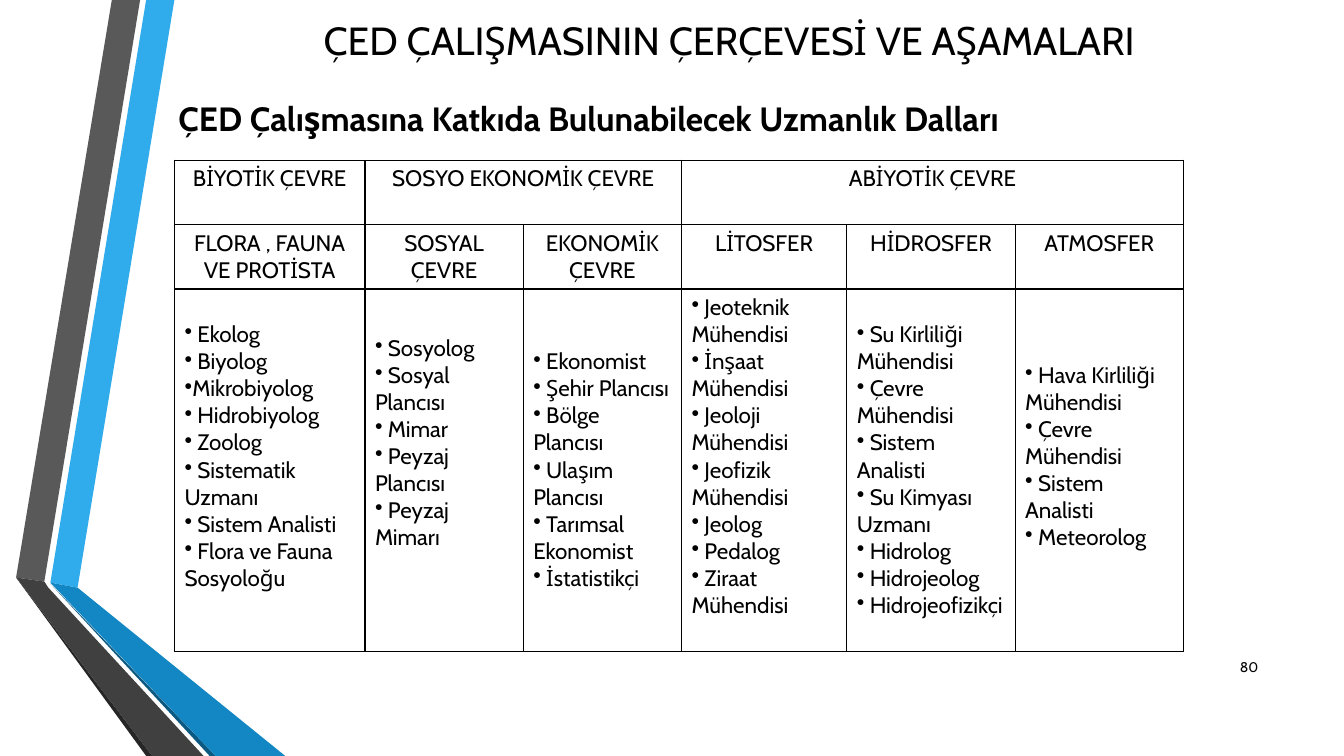
"""Build the slide on the fields of expertise that contribute to an EIA study."""
from lxml.etree import SubElement
from pptx import Presentation
from pptx.dml.color import RGBColor
from pptx.enum.text import MSO_ANCHOR, MSO_AUTO_SIZE, PP_ALIGN
from pptx.oxml.ns import qn
from pptx.util import Inches, Pt


def color(value):
    return RGBColor.from_string(value)


def format_text(frame, size, align, bold=False):
    for para in frame.paragraphs:
        para.alignment = align
        for span in para.runs:
            span.font.name = "Cabin"
            span.font.size = Pt(size)
            span.font.bold = bold
            span.font.color.rgb = color("000000")


deck = Presentation()
deck.slide_width = Inches(13.33)
deck.slide_height = Inches(7.5)
page = deck.slides.add_slide(deck.slide_layouts[1])

ribbons = [
    ("30ACEC", [(0.5, 5.78), (0.77, 5.83), (1.73, 0), (1.45, 0)]),
    ("595959", [(1.39, 0), (1.11, 0), (0.16, 5.73), (0.44, 5.77)]),
    ("262626", [(0.16, 5.73), (1.45, 7.5), (1.51, 7.5)]),
    ("0C5A82", [(0.5, 5.79), (2.08, 7.5), (2.14, 7.5)]),
    ("1287C3", [(0.5, 5.78), (2.14, 7.5), (2.83, 7.5), (0.77, 5.83)]),
    ("404040", [(2.02, 7.5), (0.48, 5.83), (0.44, 5.77), (0.16, 5.73), (1.51, 7.5)]),
]
for fill, points in ribbons:
    corners = [(Inches(x), Inches(y)) for x, y in points]
    builder = page.shapes.build_freeform(*corners[0])
    builder.add_line_segments(corners[1:], close=True)
    ribbon = builder.convert_to_shape()
    ribbon.shadow.inherit = False
    ribbon.fill.solid()
    ribbon.fill.fore_color.rgb = color(fill)
    ribbon.line.fill.background()

title = page.shapes.title
subtitle = page.placeholders[1]
number = page.shapes.add_textbox(0, 0, 0, 0)
texts = [
    (title, (1.75, 0.14, 10.96, 0.51), "ÇED ÇALIŞMASININ ÇERÇEVESİ VE AŞAMALARI",
     28, PP_ALIGN.CENTER, False),
    (subtitle, (1.67, 0.9, 10.96, 0.55),
     "ÇED Çalışmasına Katkıda Bulunabilecek Uzmanlık Dalları",
     24, PP_ALIGN.LEFT, True),
    (number, (11.98, 6.42, 0.6, 0.4), "80", 10, PP_ALIGN.RIGHT, False),
]
for box, place, text, size, align, bold in texts:
    box.left, box.top, box.width, box.height = map(Inches, place)
    frame = box.text_frame
    frame.text = text
    frame.word_wrap = True
    frame.auto_size = MSO_AUTO_SIZE.NONE
    frame.vertical_anchor = MSO_ANCHOR.MIDDLE
    format_text(frame, size, align, bold)

subtitle_para = subtitle.text_frame.paragraphs[0]
subtitle_para.space_before = Pt(0)
subtitle_format = subtitle_para._p.get_or_add_pPr()
subtitle_format.set("marL", "0")
subtitle_format.set("indent", "0")
SubElement(subtitle_format, qn("a:buNone"))

environments = [(0, 0, "BİYOTİK ÇEVRE"), (1, 2, "SOSYO EKONOMİK ÇEVRE"), (3, 5, "ABİYOTİK ÇEVRE")]
fields = [
    ("FLORA , FAUNA VE PROTİSTA", 1.89, 1,
     [" Ekolog", " Biyolog", "Mikrobiyolog", " Hidrobiyolog", " Zoolog",
      " Sistematik Uzmanı", " Sistem Analisti", " Flora ve Fauna Sosyoloğu"]),
    ("SOSYAL ÇEVRE", 1.57, 2,
     [" Sosyolog", " Sosyal Plancısı", " Mimar", " Peyzaj Plancısı", " Peyzaj Mimarı"]),
    ("EKONOMİK ÇEVRE", 1.57, 0,
     [" Ekonomist", " Şehir Plancısı", " Bölge Plancısı", " Ulaşım Plancısı",
      " Tarımsal Ekonomist", " İstatistikçi"]),
    ("LİTOSFER", 1.64, 1,
     [" Jeoteknik Mühendisi", " İnşaat Mühendisi", " Jeoloji Mühendisi",
      " Jeofizik Mühendisi", " Jeolog", " Pedalog", " Ziraat Mühendisi"]),
    ("HİDROSFER", 1.67, 0,
     [" Su Kirliliği Mühendisi", " Çevre Mühendisi", " Sistem Analisti",
      " Su Kimyası Uzmanı", " Hidrolog", " Hidrojeolog", " Hidrojeofizikçi"]),
    ("ATMOSFER", 1.67, 1,
     [" Hava Kirliliği Mühendisi", " Çevre Mühendisi", " Sistem Analisti", " Meteorolog"]),
]
row_heights = [0.64, 0.63, 3.59]
line_height = 0.27

table = page.shapes.add_table(
    len(row_heights), len(fields), Inches(1.73), Inches(1.59),
    Inches(10.01), Inches(sum(row_heights))).table
table.first_row = False
table.horz_banding = False
for row, height in zip(table.rows, row_heights):
    row.height = Inches(height)

for first, last, name in environments:
    table.cell(0, first).text = name
    if last > first:
        table.cell(0, first).merge(table.cell(0, last))

for index, (name, width, spare_lines, experts) in enumerate(fields):
    table.columns[index].width = Inches(width)
    table.cell(1, index).text = name
    expert_cell = table.cell(2, index)
    expert_cell.text = "\n".join(experts)
    expert_cell.vertical_anchor = MSO_ANCHOR.MIDDLE
    expert_cell.margin_bottom = Inches(0.05 + spare_lines * line_height)
    for para in expert_cell.text_frame.paragraphs:
        SubElement(para._p.get_or_add_pPr(), qn("a:buChar"), char="•")

for row_index, row in enumerate(table.rows):
    for cell in row.cells:
        format_text(cell.text_frame, 16, PP_ALIGN.LEFT if row_index == 2 else PP_ALIGN.CENTER)
        cell_format = cell._tc.get_or_add_tcPr()
        for side in ("a:lnL", "a:lnR", "a:lnT", "a:lnB"):
            border = SubElement(cell_format, qn(side), w=str(Pt(1)))
            SubElement(SubElement(border, qn("a:solidFill")), qn("a:srgbClr"), val="000000")
        cell.fill.background()

deck.save("out.pptx")
